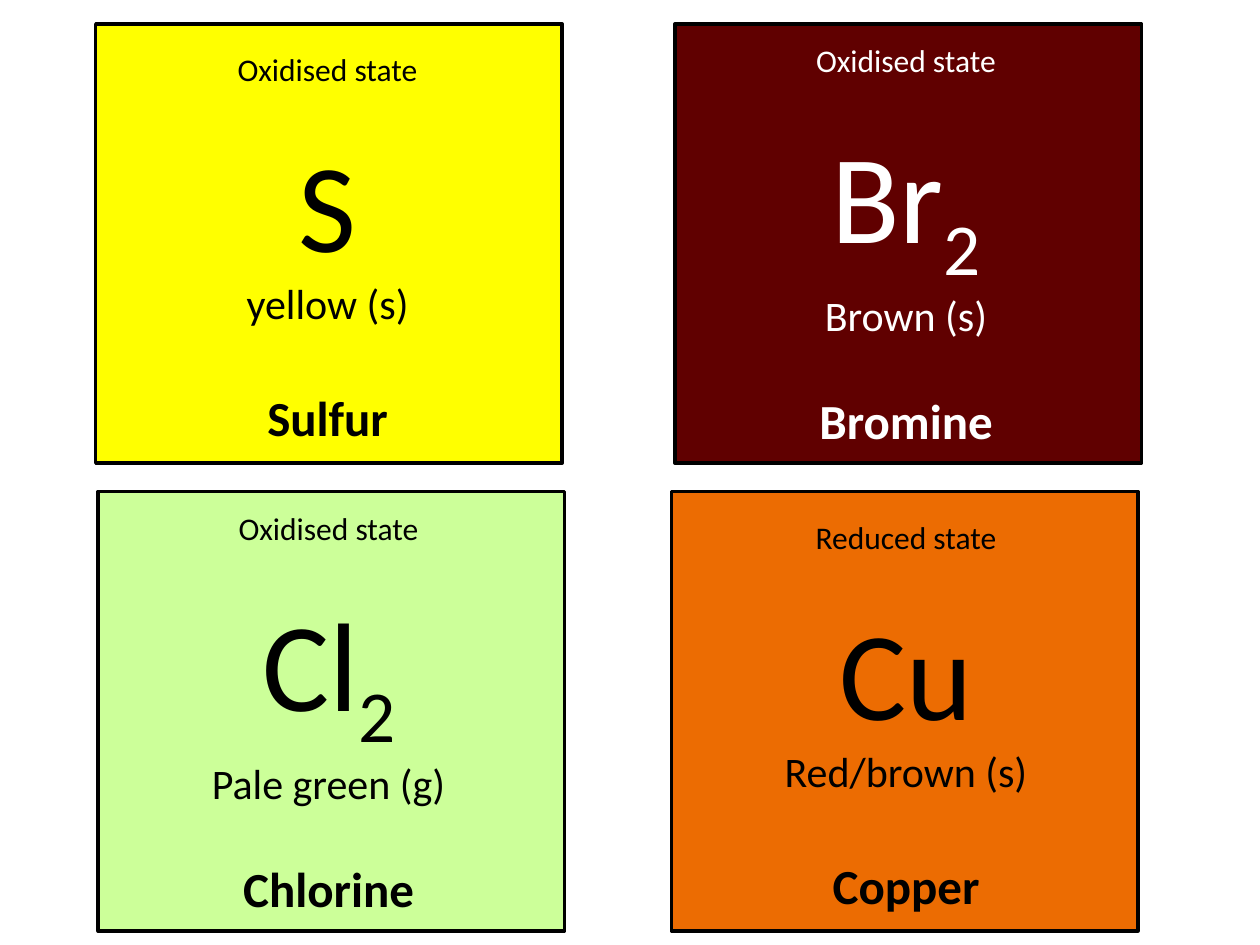
from pptx import Presentation
from pptx.dml.color import RGBColor
from pptx.enum.shapes import MSO_SHAPE
from pptx.enum.text import MSO_AUTO_SIZE, PP_ALIGN
from pptx.util import Cm, Pt

RECT = MSO_SHAPE.RECTANGLE
CENTER = PP_ALIGN.CENTER
FIT_SHAPE = MSO_AUTO_SIZE.SHAPE_TO_FIT_TEXT

COLORS = {
    "black": "000000",
    "white": "FFFFFF",
    "pale green": "CCFF99",
    "yellow": "FFFF00",
    "brown": "600000",
    "orange": "EC6C02",
}
FONT = "Calibri"
CARD_W, CARD_H = 9.4, 8.86
TEXT_W = 10.21
TOP_ROW, BOTTOM_ROW = 0.48, 9.91

# left, top, text offset, fill, text colour, state, symbol, subscript, appearance, name
CARDS = [
    (1.98, BOTTOM_ROW, -0.46, "pale green", "black",
     "Oxidised state", "Cl", "2", "Pale green (g)", "Chlorine"),
    (1.93, TOP_ROW, -0.43, "yellow", "black",
     "Oxidised state", "S", "", "yellow (s)", "Sulfur"),
    (13.61, TOP_ROW, -0.45, "brown", "white",
     "Oxidised state", "Br", "2", "Brown (s)", "Bromine"),
    (13.54, BOTTOM_ROW, -0.38, "orange", "black",
     "Reduced state", "Cu", "", "Red/brown (s)", "Copper"),
]


def rgb(name):
    return RGBColor.from_string(COLORS[name])


def add_line(tf, text, size, color, bold=False, before=0, after=0):
    """Fill the empty first paragraph, or append one, with a centred line."""
    p = tf.paragraphs[0] if not tf.text else tf.add_paragraph()
    p.text = text
    p.alignment = CENTER
    p.space_before, p.space_after = Pt(before), Pt(after)
    p.font.name = FONT
    p.font.size = Pt(size)
    p.font.bold = bold
    p.font.color.rgb = rgb(color)
    return p


def add_card(s, left, top, text_dx, fill, color, state, symbol, subscript,
             appearance, name):
    sp = s.shapes.add_shape(RECT, Cm(left), Cm(top), Cm(CARD_W), Cm(CARD_H))
    sp.shadow.inherit = False
    sp.fill.solid()
    sp.fill.fore_color.rgb = rgb(fill)
    sp.line.color.rgb = rgb("black")
    sp.line.width = Pt(2)

    # A subscript deepens the symbol line, so the text starts higher.
    text_dy, text_h, name_gap = (0.23, 8.13, 29) if subscript else (0.41, 8.46, 34)
    box = s.shapes.add_textbox(Cm(left + text_dx), Cm(top + text_dy),
                               Cm(TEXT_W), Cm(text_h))
    tf = box.text_frame
    tf.word_wrap = True
    tf.auto_size = FIT_SHAPE
    add_line(tf, state, 18, color, after=22)
    p = add_line(tf, symbol, 72, color)
    if subscript:
        r = p.add_run()
        r.text = subscript
        r.font._element.set("baseline", "-25000")
    add_line(tf, appearance, 24, color)
    add_line(tf, name, 28, color, bold=True, before=name_gap)


def main():
    prs = Presentation()
    prs.slide_width, prs.slide_height = Cm(25.4), Cm(19.05)
    s = prs.slides.add_slide(prs.slide_layouts[6])
    for card in CARDS:
        add_card(s, *card)
    prs.save("out.pptx")


if __name__ == "__main__":
    main()
